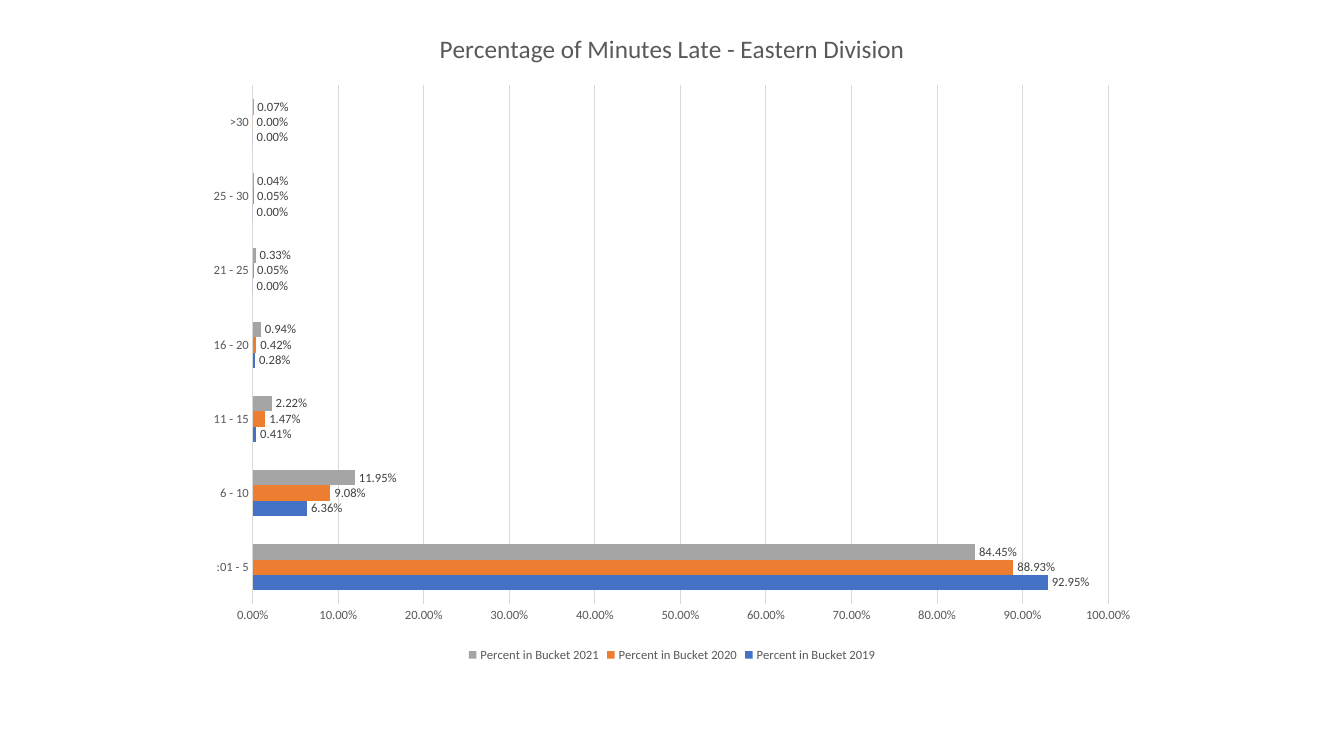
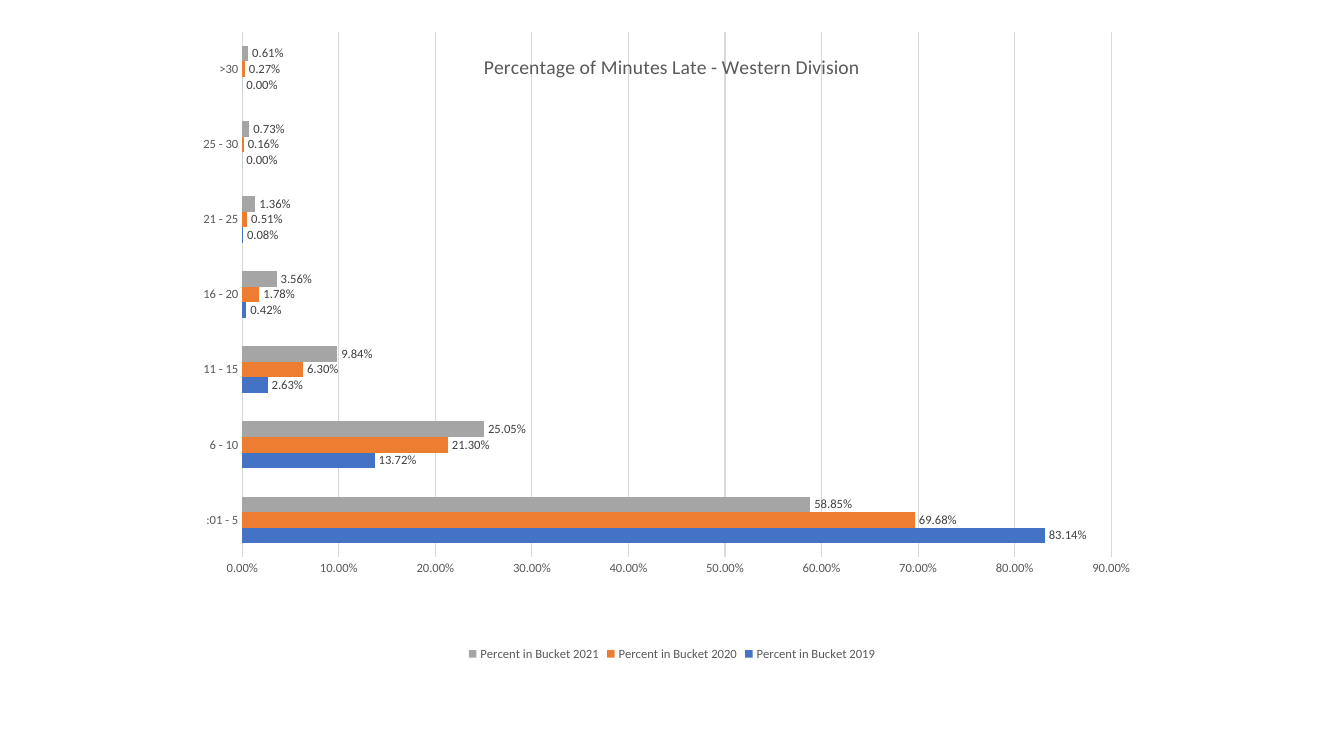
from dataclasses import dataclass
from lxml.etree import SubElement
from pptx import Presentation
from pptx.chart.data import CategoryChartData
from pptx.dml.color import RGBColor
from pptx.enum.chart import XL_CHART_TYPE, XL_LABEL_POSITION, XL_LEGEND_POSITION, XL_TICK_MARK
from pptx.oxml.ns import qn
from pptx.util import Inches, Pt


@dataclass(frozen=True)
class Theme:
    face: str = "Calibri"
    ink: str = "595959"
    label: str = "404040"
    rule: str = "D9D9D9"
    bars: tuple = ("4472C4", "ED7D31", "A5A5A5")
    small: float = 9
    base: float = 10
    thin: float = 0.75
    form: str = "0.00%"


THEME = Theme()
BANDS = (":01 - 5", "6 - 10", "11 - 15", "16 - 20", "21 - 25", "25 - 30", ">30")
YEARS = (2019, 2020, 2021)
EAST = (
    (0.9295, 0.0636, 0.0041, 0.0028, 0, 0, 0),
    (0.8893, 0.0908, 0.0147, 0.0042, 0.0005, 0.0005, 0),
    (0.8445, 0.1195, 0.0222, 0.0094, 0.0033, 0.0004, 0.0007),
)
WEST = (
    (0.8314, 0.1372, 0.0263, 0.0042, 0.0008, 0, 0),
    (0.6968, 0.213, 0.063, 0.0178, 0.0051, 0.0016, 0.0027),
    (0.5885, 0.2505, 0.0984, 0.0356, 0.0136, 0.0073, 0.0061),
)


def style(font, size, color):
    font.name = THEME.face
    font.size = Pt(size)
    font.bold = False
    font.color.rgb = RGBColor.from_string(color)


def stroke(line):
    line.width = Pt(THEME.thin)
    line.color.rgb = RGBColor.from_string(THEME.rule)


def head(chart, text, size):
    chart.has_title = True
    run = chart.chart_title.text_frame.paragraphs[0].add_run()
    run.text = text
    style(run.font, size, THEME.ink)


def axes(chart):
    for axis in (chart.category_axis, chart.value_axis):
        axis.major_tick_mark = axis.minor_tick_mark = XL_TICK_MARK.NONE
        style(axis.tick_labels.font, THEME.small, THEME.ink)
    stroke(chart.category_axis.format.line)
    scale = chart.value_axis
    scale.format.line.fill.background()
    scale.has_major_gridlines = True
    stroke(scale.major_gridlines.format.line)
    scale.tick_labels.number_format = THEME.form
    scale.tick_labels.number_format_is_linked = False


def bars(chart):
    plot = chart.plots[0]
    plot.gap_width = 182
    plot.vary_by_categories = False
    for item, color in zip(plot.series, THEME.bars):
        item.format.fill.solid()
        item.format.fill.fore_color.rgb = RGBColor.from_string(color)
        labels = item.data_labels
        labels.show_value = True
        labels.number_format = THEME.form
        labels.number_format_is_linked = False
        labels.position = XL_LABEL_POSITION.OUTSIDE_END
        style(labels.font, THEME.small, THEME.label)


def legend(chart):
    chart.has_legend = True
    chart.legend.position = XL_LEGEND_POSITION.BOTTOM
    chart.legend.include_in_layout = False
    style(chart.legend.font, THEME.small, THEME.ink)


def frame(chart, area):
    plot = chart.plots[0]._element.getparent()
    layout = plot.find(qn("c:layout"))
    if layout is None:
        layout = SubElement(plot, qn("c:layout"))
        plot.insert(0, layout)
    manual = SubElement(layout, qn("c:manualLayout"))
    keys = ("layoutTarget", "xMode", "yMode", "x", "y", "w", "h")
    for key, val in zip(keys, ("inner", "edge", "edge", *area)):
        SubElement(manual, qn(f"c:{key}")).set("val", str(val))


def page(deck, box, name, size, rows, area=None):
    slide = deck.slides.add_slide(deck.slide_layouts[6])
    data = CategoryChartData(number_format=THEME.form)
    data.categories = BANDS
    for year, row in zip(YEARS, rows):
        data.add_series(f"Percent in Bucket {year}", row)
    chart = slide.shapes.add_chart(
        XL_CHART_TYPE.BAR_CLUSTERED, *map(Inches, box), data
    ).chart
    style(chart.font, THEME.base, "000000")
    head(chart, f"Percentage of Minutes Late - {name} Division", size)
    axes(chart)
    bars(chart)
    legend(chart)
    if area:
        frame(chart, area)


def main():
    deck = Presentation()
    deck.slide_width, deck.slide_height = Inches(13.33), Inches(7.5)
    page(deck, (1.93, 0.08, 9.47, 6.53), "Eastern", 18, EAST)
    page(deck, (1.93, 0.31, 9.47, 6.29), "Western", 14, WEST, (0.05, 0, 0.91, 0.83))
    deck.save("out.pptx")


if __name__ == "__main__":
    main()
